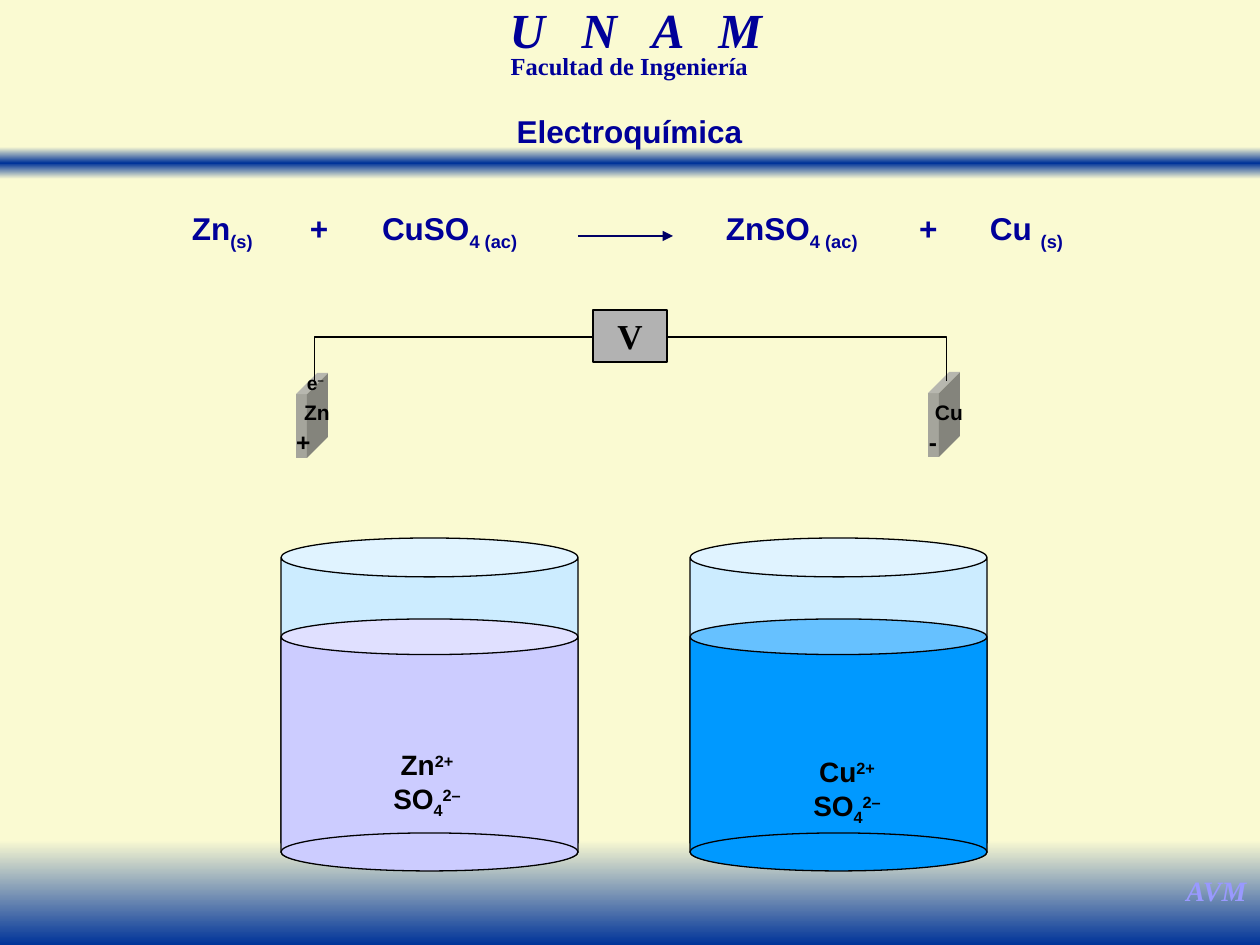
"""Build the galvanic cell slide."""
from lxml import etree
from pptx import Presentation
from pptx import util as u
from pptx.dml.color import RGBColor
from pptx.enum import shapes, text
from pptx.oxml.ns import qn

HUES = {"cream": "FAFAD2", "band": "003399", "navy": "000099", "arrow": "000066",
        "black": "000000", "mark": "9999FF", "glass": "CCECFF", "zinc": "CCCCFF",
        "copper": "0099FF", "gray": "B2B2B2", "plate": "A5A59C"}
ARIAL, TIMES = "Arial", "Times New Roman"
KIND = shapes.MSO_SHAPE
SUB, SUP = -25000, 30000
PAD = (13, 6)


def px(n):
    """Turn px into EMU."""
    return u.Emu(round(n * 914400 / 126))


def hue(name):
    """Give the named colour."""
    return RGBColor.from_string(HUES[name])


def apply(item, vals):
    """Set attributes from a dict."""
    for key, val in vals.items():
        setattr(item, key, val)


def write(shape, lines, size, tint="black", face=ARIAL, pad=PAD, ital=False,
          lead=None, gap=None, mid=False, left=False):
    """Fill a shape with lines, each a list of (text, baseline) runs."""
    frame = shape.text_frame
    side, top = map(px, pad)
    apply(frame, {"word_wrap": False, "auto_size": text.MSO_AUTO_SIZE.NONE,
                  "margin_left": side, "margin_right": side,
                  "margin_top": top, "margin_bottom": top,
                  "vertical_anchor": text.MSO_ANCHOR.MIDDLE if mid else text.MSO_ANCHOR.TOP})
    for i, runs in enumerate(lines):
        para = frame.add_paragraph() if i else frame.paragraphs[0]
        para.alignment = text.PP_ALIGN.LEFT if left else text.PP_ALIGN.CENTER
        if lead:
            para.line_spacing = lead
        for words, base in runs:
            run = para.add_run()
            run.text = words
            apply(run.font, {"name": face, "size": u.Pt(size), "bold": True, "italic": ital})
            run.font.color.rgb = hue(tint)
            props = run._r.get_or_add_rPr()
            if base:
                props.set("baseline", str(base))
            if gap:
                props.set("spc", str(gap))


def label(home, box, lines, size, **style):
    """Add a text box."""
    write(home.add_textbox(*map(px, box)), lines, size, **style)


def form(home, kind, box, tint, edge=True, adj=None):
    """Add a filled preset shape."""
    shape = home.add_shape(kind, *map(px, box))
    shape.shadow.inherit = False
    shape.fill.solid()
    shape.fill.fore_color.rgb = hue(tint)
    if edge:
        shape.line.color.rgb = hue("black")
        shape.line.width = u.Pt(0.75)
    else:
        shape.line.fill.background()
    if adj is not None:
        shape.adjustments[0] = adj
    return shape


def band(home, box, tints):
    """Add a bar that fades downward through evenly spaced tints."""
    shape = form(home, KIND.RECTANGLE, box, tints[0], edge=False)
    shape.fill.gradient()
    shape.fill.gradient_angle = 270
    stops = shape._element.spPr.find(".//" + qn("a:gsLst"))
    for stop in list(stops):
        stops.remove(stop)
    for i, tint in enumerate(tints):
        stop = etree.SubElement(stops, qn("a:gs"), pos=str(100000 * i // (len(tints) - 1)))
        etree.SubElement(stop, qn("a:srgbClr"), val=HUES[tint])


def wire(home, kind, ends, tint):
    """Add a thin connector and give its properties element."""
    link = home.add_connector(kind, *map(px, ends))
    link.line.color.rgb = hue(tint)
    link.line.width = u.Pt(0.75)
    props = link._element.spPr
    etree.SubElement(props, qn("a:effectLst"))
    return props


def arrow(home, ends):
    """Add the reaction arrow."""
    props = wire(home, shapes.MSO_CONNECTOR.STRAIGHT, ends, "arrow")
    etree.SubElement(props.find(qn("a:ln")), qn("a:tailEnd"), type="triangle")


def bridge(home, left, right, foot, rise):
    """Add an elbow wire that climbs, crosses and drops between two plates."""
    mid, half = (left + right) // 2, (right - left) // 2
    props = wire(home, shapes.MSO_CONNECTOR.ELBOW,
                 (mid, foot - half, mid + 1, foot + half), "black")
    props.find(qn("a:xfrm")).set("rot", "16200000")
    guides = props.find(qn("a:prstGeom")).find(qn("a:avLst"))
    etree.SubElement(guides, qn("a:gd"), name="adj1", fmla=f"val {rise * 100000}")


def beaker(home, x, tint, metal, spot):
    """Add a beaker of solution with its ions."""
    cell = home.add_group_shape().shapes
    form(cell, KIND.CAN, (x, 538, 297, 324), "glass", adj=0.131)
    form(cell, KIND.CAN, (x, 619, 297, 251), tint, adj=0.142)
    form(cell, KIND.OVAL, (x, 833, 297, 38), tint)
    ions = [[(metal, 0), ("2+", SUP)], [("SO", 0), ("4", SUB), ("2–", SUP)]]
    label(cell, (*spot, 98, 81), ions, 16)


def plate(home, x, y, metal, shift):
    """Add a metal electrode with its symbol."""
    cell = home.add_group_shape().shapes
    form(cell, KIND.CUBE, (x, y, 32, 85), "plate", edge=False, adj=0.66)
    label(cell, (x + shift, 394, 52, 38), [[(metal, 0)]], 12)


def head(slide):
    """Add the page bands, headings and title."""
    home = slide.shapes
    band(home, (0, 147, 1260, 32), ("cream", "band", "cream"))
    label(home, (389, 10, 494, 54), [[("U N A M", 0)]], 28, tint="navy", face=TIMES,
          ital=True, lead=0.7, gap=700)
    label(home, (404, 53, 451, 33), [[("Facultad de Ingeniería", 0)]], 14, tint="navy",
          face=TIMES, lead=0.7)
    band(home, (0, 840, 1260, 105), ("cream", "band"))
    label(home, (1173, 868, 87, 47), [[("AVM", 0)]], 16, tint="mark", face=TIMES, ital=True)
    title = home.title
    apply(title, dict(zip(("left", "top", "width", "height"), map(px, (503, 106, 253, 50)))))
    write(title, [[("Electroquímica", 0)]], 18, tint="navy")
    home._spTree.append(title._element)


def main():
    """Build and save the slide."""
    deck = Presentation()
    deck.slide_width, deck.slide_height = px(1260), px(945)
    slide = deck.slides.add_slide(deck.slide_layouts[5])
    slide.background.fill.solid()
    slide.background.fill.fore_color.rgb = hue("cream")
    head(slide)
    home = slide.shapes
    terms = ((192, 64, "Zn", "(s)"), (310, 19, "+", ""), (382, 142, "CuSO", "4 (ac)"),
             (726, 139, "ZnSO", "4 (ac)"), (919, 19, "+", ""), (990, 77, "Cu ", "(s)"))
    for x, wide, base, sub in terms:
        runs = [(base, 0)] + ([(sub, SUB)] if sub else [])
        label(home, (x, 209, wide, 38), [runs], 18, tint="navy", pad=(0, 0), left=True)
    arrow(home, (578, 236, 673, 236))
    beaker(home, 281, "zinc", "Zn", (378, 742))
    beaker(home, 690, "copper", "Cu", (798, 749))
    plate(home, 296, 373, "Zn", -5)
    plate(home, 928, 372, "Cu", -5)
    bridge(home, 314, 946, 381, 45)
    label(home, (304, 370, 23, 27), [[("e", 0), ("–", SUP)]], 11, pad=(2, 1))
    meter = form(home, KIND.RECTANGLE, (593, 310, 74, 52), "gray")
    write(meter, [[("V", 0)]], 20, face=TIMES, mid=True)
    for x, wide, sign in ((284, 39, "+"), (916, 34, "-")):
        label(home, (x, 421, wide, 42), [[(sign, 0)]], 14)
    deck.save("out.pptx")


if __name__ == "__main__":
    main()
